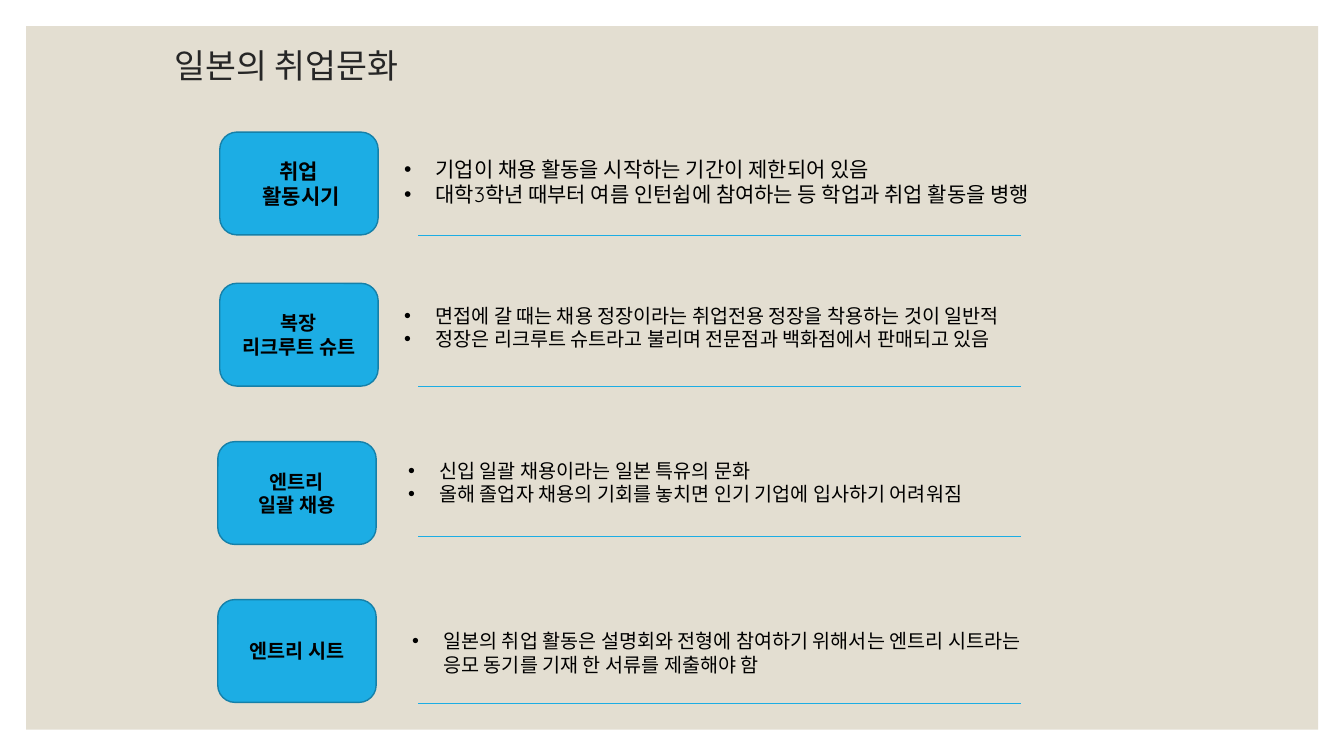
from lxml.etree import SubElement
from pptx import Presentation
from pptx.dml.color import RGBColor
from pptx.enum.shapes import MSO_CONNECTOR, MSO_SHAPE
from pptx.enum.text import MSO_ANCHOR, MSO_AUTO_SIZE, PP_ALIGN
from pptx.oxml.ns import qn
from pptx.util import Cm, Pt

SAND, BLUE, EDGE, BLACK, INK = "E3DED1", "1CADE4", "1580A9", "000000", "262626"

# label lines, label left and top, text size, rule height, list place, list items
TOPICS = [
    (["취업", " 활동시기"], (5.54, 3.33), 15, 5.92, (9.93, 3.81, 17.6, 2.74),
     ["기업이 채용 활동을 시작하는 기간이 제한되어 있음",
      "대학3학년 때부터 여름 인턴쉽에 참여하는 등 학업과 취업 활동을 병행"]),
    (["복장", "리크루트 슈트"], (5.54, 7.14), 14, 9.73, (9.93, 7.52, 17.6, 2.62),
     ["면접에 갈 때는 채용 정장이라는 취업전용 정장을 착용하는 것이 일반적",
      "정장은 리크루트 슈트라고 불리며 전문점과 백화점에서 판매되고 있음"]),
    (["엔트리", "일괄 채용"], (5.49, 11.13), 14, 13.51, (10.03, 11.43, 16.41, 2.24),
     ["신입 일괄 채용이라는 일본 특유의 문화",
      "올해 졸업자 채용의 기회를 놓치면 인기 기업에 입사하기 어려워짐"]),
    (["엔트리 시트"], (5.49, 15.11), 14, 17.73, (10.13, 15.72, 16.61, 2.24),
     ["일본의 취업 활동은 설명회와 전형에 참여하기 위해서는 엔트리 시트라는 "
      "응모 동기를 기재 한 서류를 제출해야 함"]),
]


def color(code):
    return RGBColor.from_string(code)


def apply(target, values):
    """Set each named attribute of the target."""
    for name, value in values.items():
        setattr(target, name, value)


class Page:
    font = "Quicksand"

    def __init__(self, slide):
        self.slide = slide

    def place(self, shape, box):
        apply(shape, dict(zip(("left", "top", "width", "height"), map(Cm, box))))

    def letter(self, shape, lines, size, ink=BLACK, bold=False, frame=None, para=None):
        """Fill a shape with one paragraph per line."""
        text = shape.text_frame
        apply(text, {"word_wrap": True, **(frame or {})})
        text.text = "\n".join(lines)
        for item in text.paragraphs:
            apply(item, {"space_before": Pt(0), **(para or {})})
            for run in item.runs:
                apply(run.font, {"name": self.font, "size": Pt(size), "bold": bold})
                run.font.color.rgb = color(ink)
        return text.paragraphs

    def block(self, kind, box, fill, edge=None):
        shape = self.slide.shapes.add_shape(kind, *map(Cm, box))
        shape.shadow.inherit = False
        shape.fill.solid()
        shape.fill.fore_color.rgb = color(fill)
        if edge:
            shape.line.color.rgb = color(edge)
            shape.line.width = Pt(1)
        else:
            shape.line.fill.background()
        return shape

    def panel(self, box):
        """Add the backdrop behind everything else."""
        shape = self.block(MSO_SHAPE.RECTANGLE, box, SAND)
        self.slide.shapes.title.element.addprevious(shape.element)

    def title(self, text, box):
        shape = self.slide.shapes.title
        self.place(shape, box)
        self.letter(shape, [text], 24, INK,
                    frame={"vertical_anchor": MSO_ANCHOR.MIDDLE,
                           "auto_size": MSO_AUTO_SIZE.NONE},
                    para={"alignment": PP_ALIGN.LEFT, "line_spacing": 0.9})

    def label(self, lines, spot, size):
        shape = self.block(MSO_SHAPE.ROUNDED_RECTANGLE, (*spot, 3.99, 2.59), BLUE, EDGE)
        self.letter(shape, lines, size, bold=True,
                    frame={"vertical_anchor": MSO_ANCHOR.MIDDLE},
                    para={"alignment": PP_ALIGN.CENTER})

    def rule(self, left, right, top):
        line = self.slide.shapes.add_connector(
            MSO_CONNECTOR.STRAIGHT, Cm(left), Cm(top), Cm(right), Cm(top))
        line.line.color.rgb = color(BLUE)
        line.line.width = Pt(0.5)
        SubElement(line.element.spPr, qn("a:effectLst"))

    def bullets(self, holder, items, size, box):
        self.place(holder, box)
        frame = {"vertical_anchor": MSO_ANCHOR.TOP,
                 "auto_size": MSO_AUTO_SIZE.SHAPE_TO_FIT_TEXT}
        for item in self.letter(holder, items, size, frame=frame):
            props = item._p.get_or_add_pPr()
            props.set("marL", str(Cm(0.79)))
            props.set("indent", str(-Cm(0.79)))
            SubElement(props, qn("a:buFont"), typeface="Arial")
            SubElement(props, qn("a:buChar"), char="•")


def main():
    deck = Presentation()
    apply(deck, {"slide_width": Cm(33.87), "slide_height": Cm(19.05)})
    # The comparison layout offers a title and four text bodies.
    slide = deck.slides.add_slide(deck.slide_layouts.get_by_name("Comparison"))
    page = Page(slide)
    page.panel((0.66, 0.66, 32.56, 17.73))
    page.title("일본의 취업문화", (4.14, 0.46, 21.16, 2.51))
    bodies = list(slide.placeholders)[1:]
    for holder, (name, spot, size, level, box, items) in zip(bodies, TOPICS):
        page.label(name, spot, size)
        page.rule(10.54, 25.73, level)
        page.bullets(holder, items, size, box)
    deck.save("out.pptx")


if __name__ == "__main__":
    main()
